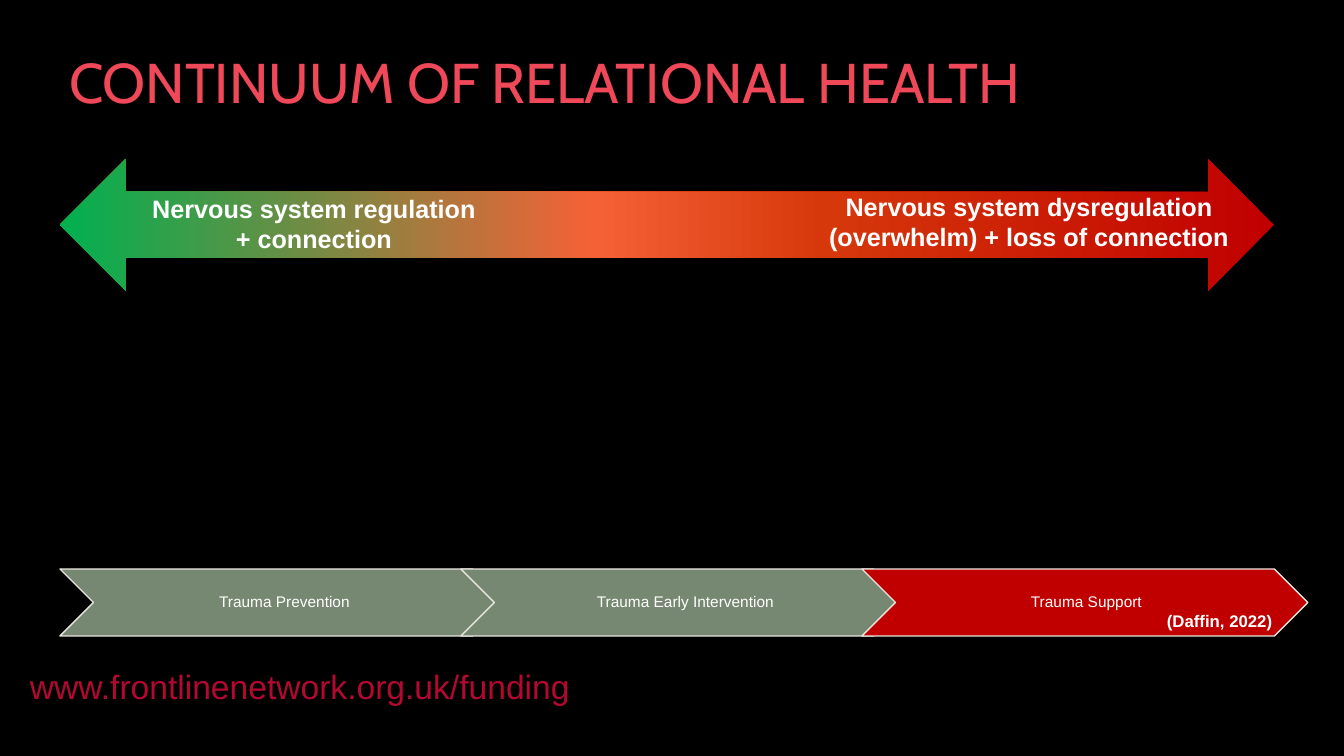
from lxml import etree
from pptx import Presentation
from pptx.dml.color import RGBColor
from pptx.enum.shapes import MSO_SHAPE
from pptx.enum.text import MSO_ANCHOR, MSO_AUTO_SIZE, PP_ALIGN
from pptx.oxml.ns import qn
from pptx.util import Pt

CHEVRON, DOUBLE_ARROW = MSO_SHAPE.CHEVRON, MSO_SHAPE.LEFT_RIGHT_ARROW
LEFT, CENTER = PP_ALIGN.LEFT, PP_ALIGN.CENTER
TOP, MIDDLE = MSO_ANCHOR.TOP, MSO_ANCHOR.MIDDLE
PX = 914400 / 100.8
TITLE_ONLY = 5
COLORS = {
    "background": "000000", "title": "EF4858", "link": "B30931",
    "white": "FFFFFF", "outline": "E9E4E0", "sage": "768871",
    "red": "C00000", "rust": "D6380B", "orange": "F56136", "green": "00B050",
}


def px(*lengths):
    return [round(length * PX) for length in lengths]


def write(shape, lines, size, color, align=LEFT, anchor=TOP, bold=False, font="Arial"):
    """Fill the shape with one paragraph per line, all in one style."""
    frame = shape.text_frame
    frame.word_wrap = True
    frame.auto_size = MSO_AUTO_SIZE.NONE
    frame.vertical_anchor = anchor
    for index, line in enumerate(lines):
        paragraph = frame.add_paragraph() if index else frame.paragraphs[0]
        paragraph.alignment = align
        run = paragraph.add_run()
        run.text = line
        run.font.name = font
        run.font.size = Pt(size)
        run.font.bold = bold
        run.font.color.rgb = RGBColor.from_string(COLORS[color])


presentation = Presentation()
presentation.slide_width, presentation.slide_height = px(1344, 756)
slide = presentation.slides.add_slide(presentation.slide_layouts[TITLE_ONLY])
slide.background.fill.solid()
slide.background.fill.fore_color.rgb = RGBColor.from_string(COLORS["background"])

# Title
title = slide.shapes.title
title.left, title.top, title.width, title.height = px(59, 42, 1225, 78)
write(title, ["CONTINUUM OF RELATIONAL HEALTH"], 40, "title", font="Cabin")

# Stages of support
stages = [
    ("Trauma Prevention", "sage"),
    ("Trauma Early Intervention", "sage"),
    ("Trauma Support", "red"),
]
for index, (label, color) in enumerate(stages):
    stage = slide.shapes.add_shape(CHEVRON, *px(60 + 401 * index, 569, 446, 67))
    stage.shadow.inherit = False
    stage.fill.solid()
    stage.fill.fore_color.rgb = RGBColor.from_string(COLORS[color])
    stage.line.color.rgb = RGBColor.from_string(COLORS["outline"])
    stage.line.width = Pt(1)
    write(stage, [label], 11, "white", CENTER, MIDDLE)
    frame = stage.text_frame
    frame.margin_left, frame.margin_top, frame.margin_right, frame.margin_bottom = px(5, 2, 2, 2)
    frame.paragraphs[0].line_spacing = 0.9

# Continuum arrow, red at the right through to green at the left
arrow = slide.shapes.add_shape(DOUBLE_ARROW, *px(60, 159, 1214, 132))
arrow.shadow.inherit = False
arrow.line.fill.background()
arrow.fill.gradient()
arrow.fill.gradient_angle = 180
stop_list = arrow.fill._fill._gradFill.find(qn("a:gsLst"))
for stop in list(stop_list):
    stop_list.remove(stop)
for percent, color in [(0, "red"), (37, "rust"), (56, "orange"), (100, "green")]:
    stop = etree.SubElement(stop_list, qn("a:gs"), pos=str(percent * 1000))
    etree.SubElement(stop, qn("a:srgbClr"), val=COLORS[color])

# Free-standing text
texts = [
    ((97, 188, 434, 72), ["Nervous system regulation", "+ connection"], 18, "white", CENTER, True),
    ((812, 186, 434, 72), ["Nervous system dysregulation (overwhelm) + loss of connection"],
     18, "white", CENTER, True),
    ((1157, 606, 180, 30), ["(Daffin, 2022)"], 12, "white", LEFT, True),
    ((20, 661, 643, 50), ["www.frontlinenetwork.org.uk/funding"], 24, "link", LEFT, False),
]
for box, lines, size, color, align, bold in texts:
    text_box = slide.shapes.add_textbox(*px(*box))
    write(text_box, lines, size, color, align, bold=bold)

presentation.save("out.pptx")
